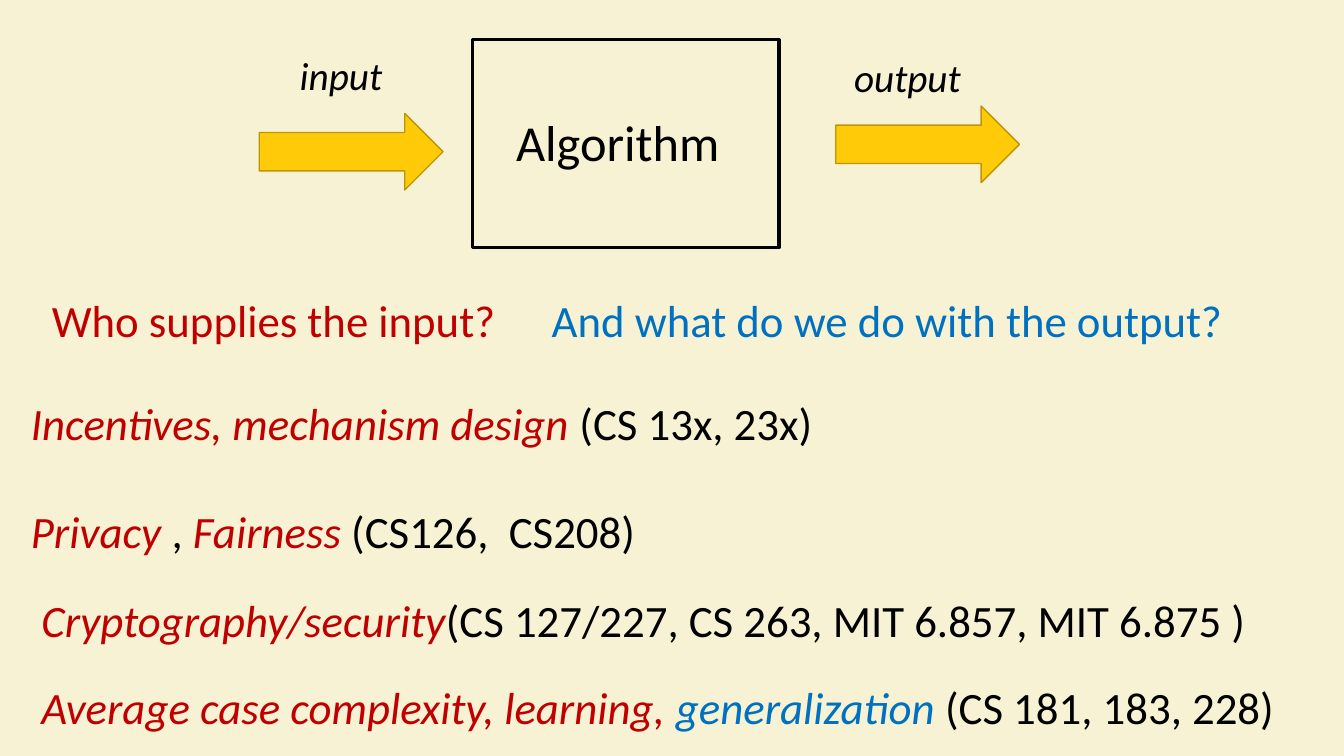
from pptx import Presentation
from pptx.dml.color import RGBColor
from pptx.enum.shapes import MSO_SHAPE
from pptx.util import Pt

PX = 9525  # EMU per px, 96 px to the inch
FONT = "Calibri"
COLORS = {
    "background": "F7F2D3",
    "black": "000000",
    "red": "C00000",
    "blue": "0070C0",
    "arrow": "FFCA08",
    "arrow_line": "BD9506",
}
PLAIN = {"color": "black"}
RED = {"color": "red"}
BLUE = {"color": "blue"}
RED_ITALIC = {"color": "red", "italic": True}
BLUE_ITALIC = {"color": "blue", "italic": True}


def rgb(name):
    return RGBColor.from_string(COLORS[name])


def emu(*lengths):
    return [length * PX for length in lengths]


def add_text(slide, box, paragraphs, size, gap=0):
    """Place paragraphs, each a list of (text, format) runs, gap points apart."""
    tf = slide.shapes.add_textbox(*emu(*box)).text_frame
    tf.word_wrap = True
    for i, runs in enumerate(paragraphs):
        p = tf.paragraphs[0] if i == 0 else tf.add_paragraph()
        p.space_before = Pt(gap if i else 0)
        for text, style in runs:
            r = p.add_run()
            r.text = text
            font = {"name": FONT, "size": Pt(size), "italic": style.get("italic", False)}
            for name, value in font.items():
                setattr(r.font, name, value)
            r.font.color.rgb = rgb(style["color"])


def add_outlined(slide, kind, box, line, width, fill=None):
    sp = slide.shapes.add_shape(kind, *emu(*box))
    sp.shadow.inherit = False
    if fill:
        sp.fill.solid()
        sp.fill.fore_color.rgb = rgb(fill)
    else:
        sp.fill.background()
    sp.line.color.rgb = rgb(line)
    sp.line.width = Pt(width)


def add_diagram(slide, left, top):
    add_outlined(slide, MSO_SHAPE.RECTANGLE, (left + 203, top, 292, 198), "black", 2.25)
    for x, y in ((0, 70), (549, 63)):
        add_outlined(slide, MSO_SHAPE.RIGHT_ARROW, (left + x, top + y, 175, 73),
                     "arrow_line", 1, "arrow")
    add_text(slide, (left + 235, top + 63, 230, 68), [[("Algorithm", PLAIN)]], 36)
    for label, x, y in (("input", 29, 6), ("output", 557, 8)):
        add_text(slide, (left + x, top + y, 139, 55),
                 [[(label, {"color": "black", "italic": True})]], 28)


def add_questions(slide, left, top):
    add_text(slide, (left, top, 527, 61), [[("Who supplies the input?", RED)]], 32)
    add_text(slide, (left + 476, top, 747, 61),
             [[("And what do we do with the output?", BLUE)]], 32)


def add_topics(slide, left, top):
    add_text(slide, (left, top, 1153, 165), [
        [("Incentives, mechanism design ", RED_ITALIC), ("(CS 13x, 23x)", PLAIN)],
        [("Privacy", RED_ITALIC), (" , ", PLAIN), ("Fairness ", RED_ITALIC),
         ("(CS126,  CS208)", PLAIN)],
    ], 32, gap=39)
    add_text(slide, (left + 10, top + 188, 1223, 61), [
        [("Cryptography/security", RED_ITALIC),
         ("(CS 127/227, CS 263, MIT 6.857, MIT 6.875 )", PLAIN)],
    ], 32)
    add_text(slide, (left + 10, top + 271, 1250, 61), [
        [("Average case complexity, learning, ", RED_ITALIC),
         ("generalization ", BLUE_ITALIC), ("(CS 181, 183, 228)", PLAIN)],
    ], 32)


def main():
    prs = Presentation()
    prs.slide_width, prs.slide_height = emu(1280, 720)
    slide = prs.slides.add_slide(prs.slide_layouts[6])
    slide.background.fill.solid()
    slide.background.fill.fore_color.rgb = rgb("background")
    add_diagram(slide, 247, 38)
    add_questions(slide, 40, 274)
    add_topics(slide, 20, 372)
    prs.save("out.pptx")


if __name__ == "__main__":
    main()
